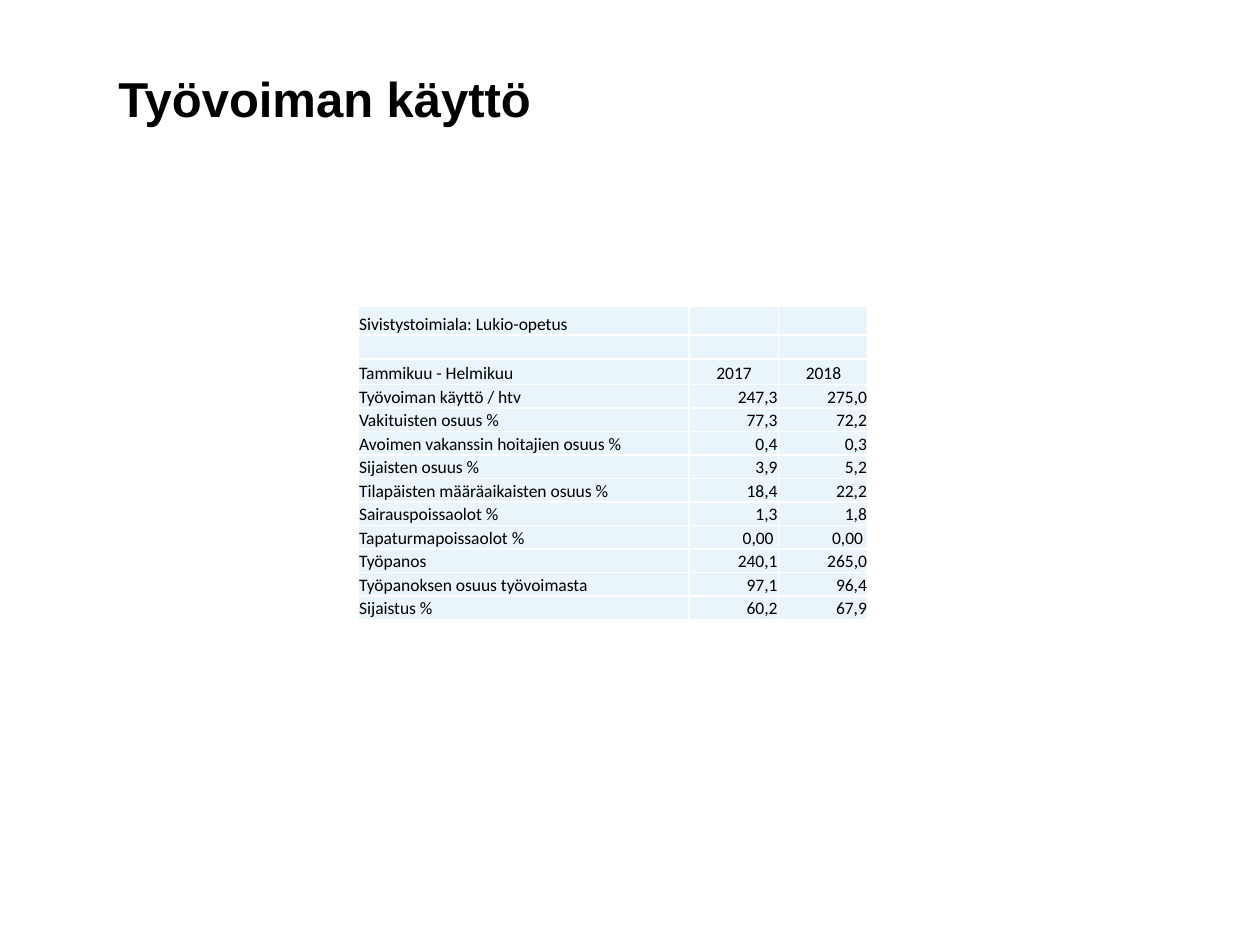
from lxml.etree import SubElement
from pptx import Presentation
from pptx.dml.color import RGBColor
from pptx.enum.text import MSO_ANCHOR, PP_ALIGN
from pptx.oxml.ns import qn
from pptx.util import Inches, Pt

BLACK = RGBColor(0x00, 0x00, 0x00)
WHITE = RGBColor(0xFF, 0xFF, 0xFF)
PALE_BLUE = RGBColor(0xE9, 0xF4, 0xFB)

COLUMNS, ROWS = 100, 75
TABLE_HEIGHT = 24.9
TOP_ROWS = [2.3, 1.9, 2]

FIGURES = [
    ("Sivistystoimiala: Lukio-opetus", "", ""),
    ("", "", ""),
    ("Tammikuu - Helmikuu", "2017", "2018"),
    ("Työvoiman käyttö / htv", "247,3", "275,0"),
    ("Vakituisten osuus %", "77,3", "72,2"),
    ("Avoimen vakanssin hoitajien osuus %", "0,4", "0,3"),
    ("Sijaisten osuus %", "3,9", "5,2"),
    ("Tilapäisten määräaikaisten osuus %", "18,4", "22,2"),
    ("Sairauspoissaolot %", "1,3", "1,8"),
    ("Tapaturmapoissaolot %", "0,00 ", "0,00 "),
    ("Työpanos", "240,1", "265,0"),
    ("Työpanoksen osuus työvoimasta", "97,1", "96,4"),
    ("Sijaistus %", "60,2", "67,9"),
]
YEAR_ROW = 2


def apply(target, values):
    for name, value in values.items():
        setattr(target, name, value)


class SlideBuilder:
    title_font = {"name": "Arial", "size": Pt(28), "bold": True}
    cell_font = {"name": "Calibri", "size": Pt(10), "bold": False}
    title_frame = {"word_wrap": True, "margin_left": 0, "margin_top": 0,
                   "margin_right": Inches(0.1), "margin_bottom": 0}
    cell_format = {"vertical_anchor": MSO_ANCHOR.BOTTOM,
                   "margin_left": Inches(0.01), "margin_top": Inches(0.01),
                   "margin_right": Inches(0.01), "margin_bottom": 0}

    def __init__(self, deck):
        self.deck = deck
        self.page = deck.slides.add_slide(deck.slide_layouts[6])

    def across(self, columns):
        return round(self.deck.slide_width * columns / COLUMNS)

    def down(self, rows):
        return round(self.deck.slide_height * rows / ROWS)

    def area(self, left, top, width, height):
        return (self.across(left), self.down(top),
                self.across(width), self.down(height))

    def add_span(self, para, text, font):
        span = para.add_run()
        span.text = text
        apply(span.font, font)
        span.font.color.rgb = BLACK

    def title(self, text, *place):
        frame = self.page.shapes.add_textbox(*self.area(*place)).text_frame
        apply(frame, self.title_frame)
        para = frame.paragraphs[0]
        para.line_spacing = Pt(33)
        self.add_span(para, text, self.title_font)

    def borders(self, cell):
        properties = cell._tc.get_or_add_tcPr()
        for position, side in enumerate(("a:lnL", "a:lnR", "a:lnT", "a:lnB")):
            line = SubElement(properties, qn(side), w=str(Pt(1)))
            fill = SubElement(line, qn("a:solidFill"))
            SubElement(fill, qn("a:srgbClr"), val=str(WHITE))
            properties.insert(position, line)

    def cell(self, cell, text, alignment):
        apply(cell, self.cell_format)
        cell.fill.solid()
        cell.fill.fore_color.rgb = PALE_BLUE
        self.borders(cell)
        para = cell.text_frame.paragraphs[0]
        para.alignment = alignment
        if text:
            self.add_span(para, text, self.cell_font)
        else:
            SubElement(para._p, qn("a:endParaRPr"), sz="1000")

    def table(self, records, widths, heights, left, top):
        place = self.area(left, top, sum(widths), sum(heights))
        table = self.page.shapes.add_table(
            len(records), len(widths), *place).table
        apply(table, {"first_row": False, "horz_banding": False})
        for column, width in zip(table.columns, widths):
            column.width = self.across(width)
        for row, height in zip(table.rows, heights):
            row.height = self.down(height)
        for row, record in enumerate(records):
            number = PP_ALIGN.CENTER if row == YEAR_ROW else PP_ALIGN.RIGHT
            for column, text in enumerate(record):
                alignment = number if column else PP_ALIGN.LEFT
                self.cell(table.cell(row, column), text, alignment)


def main():
    deck = Presentation()
    apply(deck, {"slide_width": Inches(10), "slide_height": Inches(7.5)})
    builder = SlideBuilder(deck)
    builder.title("Työvoiman käyttö", 9.4, 5.5, 81.1, 10.9)
    count = len(FIGURES) - len(TOP_ROWS)
    heights = TOP_ROWS + [(TABLE_HEIGHT - sum(TOP_ROWS)) / count] * count
    builder.table(FIGURES, [26.3, 7.1, 7.1], heights, 28.4, 24.3)
    deck.save("out.pptx")


if __name__ == "__main__":
    main()
